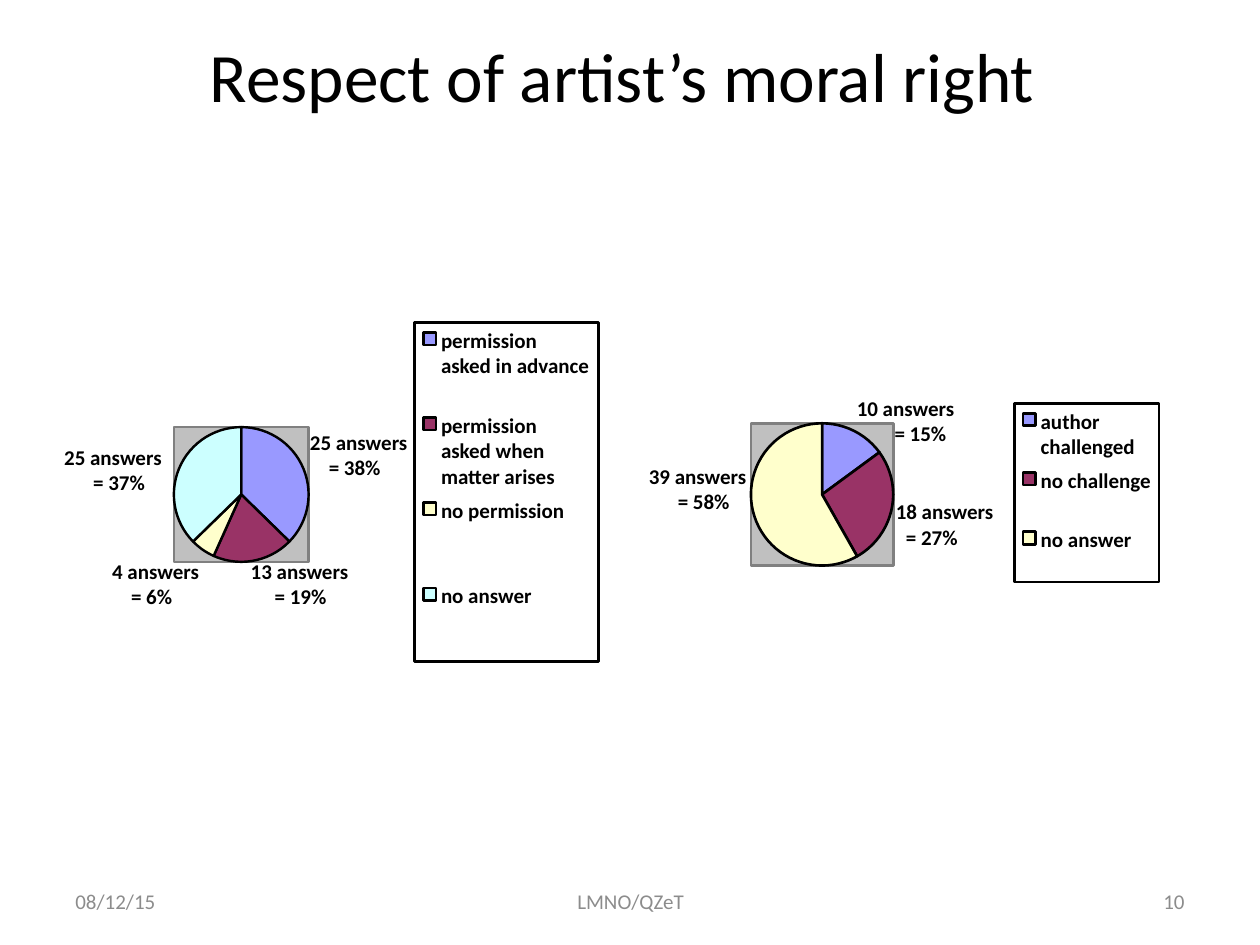
from lxml import etree
from pptx import Presentation
from pptx.chart.data import CategoryChartData
from pptx.dml.color import RGBColor
from pptx.enum.chart import XL_CHART_TYPE as CT
from pptx.enum.shapes import MSO_SHAPE as SHAPE
from pptx.enum.text import MSO_ANCHOR as ANCHOR, MSO_AUTO_SIZE as AUTO, PP_ALIGN as ALIGN
from pptx.oxml import parse_xml
from pptx.oxml.ns import nsdecls
from pptx.util import Inches, Pt

COLORS = ["9999FF", "993366", "FFFFCC", "CCFFFF"]
MARGIN = 0.1


def rgb(value):
    """Turn a hex string into a colour."""
    return RGBColor.from_string(value)


def style(p, size=12, color="000000", bold=True, align=ALIGN.LEFT):
    """Format a paragraph and its runs."""
    p.alignment = align
    for r in p.runs:
        r.font.name = "Calibri"
        r.font.size = Pt(size)
        r.font.bold = bold
        r.font.color.rgb = rgb(color)


def add_rect(s, box, fill, line, width):
    """Draw an outlined rectangle, unfilled if fill is None."""
    sp = s.shapes.add_shape(SHAPE.RECTANGLE, *map(Inches, box))
    sp.shadow.inherit = False
    if fill:
        sp.fill.solid()
        sp.fill.fore_color.rgb = rgb(fill)
    else:
        sp.fill.background()
    sp.line.color.rgb = rgb(line)
    sp.line.width = Pt(width)


def add_lines(s, left, top, width, lines, indent=0):
    """Write bold lines without insets, indenting all but the first."""
    sp = s.shapes.add_textbox(*map(Inches, (left, top, width, 0.2 * len(lines))))
    tf = sp.text_frame
    tf.word_wrap = False
    tf.margin_left = tf.margin_top = tf.margin_right = tf.margin_bottom = 0
    tf.text = "\n".join(lines)
    for i, p in enumerate(tf.paragraphs):
        style(p)
        if i and indent:
            p._p.get_or_add_pPr().set("marL", str(Inches(indent)))


def add_pie(s, box, categories, values, width):
    """Place a pie chart that fills a grey square."""
    left, top, size, _ = box
    add_rect(s, box, "C0C0C0", "808080", width)
    data = CategoryChartData()
    data.categories = categories
    data.add_series("Answers", values)
    outer = size + 2 * MARGIN
    frame = (left - MARGIN, top - MARGIN, outer, outer)
    chart = s.shapes.add_chart(CT.PIE, *map(Inches, frame), data).chart
    chart.has_legend = False
    chart.has_title = False
    chart.font.name = "Calibri"
    chart.font.size = Pt(12)
    plot = chart.plots[0]
    plot.vary_by_categories = True
    for i, color in enumerate(COLORS[:len(values)]):
        fmt = plot.series[0].points[i].format
        fmt.fill.solid()
        fmt.fill.fore_color.rgb = rgb(color)
        fmt.line.color.rgb = rgb("000000")
        fmt.line.width = Pt(width)
    area = chart._chartSpace.chart.plotArea
    for old in area.findall("{*}layout"):
        area.remove(old)
    layout = parse_xml(f"<c:layout {nsdecls('c')}><c:manualLayout/></c:layout>")
    settings = [("layoutTarget", "inner"), ("xMode", "edge"), ("yMode", "edge"),
                ("x", MARGIN / outer), ("y", MARGIN / outer),
                ("w", size / outer), ("h", size / outer)]
    for tag, value in settings:
        name = layout[0].tag.replace("manualLayout", tag)
        etree.SubElement(layout[0], name).set("val", str(value))
    area.insert(0, layout)


def add_legend(s, box, entries, pitch, width):
    """Draw a framed legend with evenly spaced entries."""
    left, top, w, _ = box
    add_rect(s, box, None, "000000", width)
    for i, (lines, color) in enumerate(zip(entries, COLORS)):
        y = top + 0.04 + i * pitch
        add_rect(s, (left + 0.07, y + 0.04, 0.1, 0.1), color, "000000", width)
        add_lines(s, left + 0.21, y, w - 0.21, lines)


def add_survey(s, pie, legend, entries, values, labels, pitch, width):
    """Build one pie with its labels and legend."""
    add_pie(s, pie, [" ".join(lines) for lines in entries], values, width)
    for value, (left, top, percent, indent) in zip(values, labels):
        lines = [f"{value} answers", f"= {percent}%"]
        add_lines(s, left, top, 0.8, lines, indent)
    add_legend(s, legend, entries, pitch, width)


def add_title(s, box, text):
    """Place and format the title."""
    sp = s.shapes.title
    sp.left, sp.top, sp.width, sp.height = map(Inches, box)
    tf = sp.text_frame
    tf.text = text
    tf.auto_size = AUTO.NONE
    tf.vertical_anchor = ANCHOR.TOP
    tf.margin_top = 0
    style(tf.paragraphs[0], 39.6, bold=False, align=ALIGN.CENTER)


def add_footer(s, top, height):
    """Write the date, the footer and the slide number."""
    for left, width, text, align in [
        (0.5, 2.33, "08/12/15", ALIGN.LEFT),
        (3.42, 3.17, "LMNO/QZeT", ALIGN.CENTER),
        (7.17, 2.33, "10", ALIGN.RIGHT),
    ]:
        sp = s.shapes.add_textbox(*map(Inches, (left, top, width, height)))
        tf = sp.text_frame
        tf.word_wrap = True
        tf.vertical_anchor = ANCHOR.MIDDLE
        tf.text = text
        style(tf.paragraphs[0], 12, "8C8C8C", False, align)


def main():
    """Build and save the slide."""
    prs = Presentation()
    prs.slide_width, prs.slide_height = Inches(10), Inches(7.5)
    s = prs.slides.add_slide(prs.slide_layouts[5])
    add_title(s, (0.44, 0.26, 9, 1.25), "Respect of artist’s moral right")
    add_survey(
        s, (1.38, 3.39, 1.07, 1.07), (3.29, 2.56, 1.46, 2.69),
        [["permission", "asked in advance"],
         ["permission", "asked when", "matter arises"],
         ["no permission"], ["no answer"]],
        [25, 13, 4, 25],
        [(2.46, 3.41, 38, 0.15), (1.99, 4.43, 19, 0.19),
         (0.89, 4.43, 6, 0.15), (0.51, 3.53, 37, 0.23)],
        0.675, 1.38)
    add_survey(
        s, (5.96, 3.36, 1.13, 1.13), (8.05, 3.2, 1.15, 1.42),
        [["author", "challenged"], ["no challenge"], ["no answer"]],
        [10, 18, 39],
        [(6.8, 3.14, 15, 0.3), (7.11, 3.96, 27, 0.08), (5.15, 3.68, 58, 0.23)],
        0.47, 1.5)
    add_footer(s, 6.95, 0.4)
    prs.save("out.pptx")


if __name__ == "__main__":
    main()
